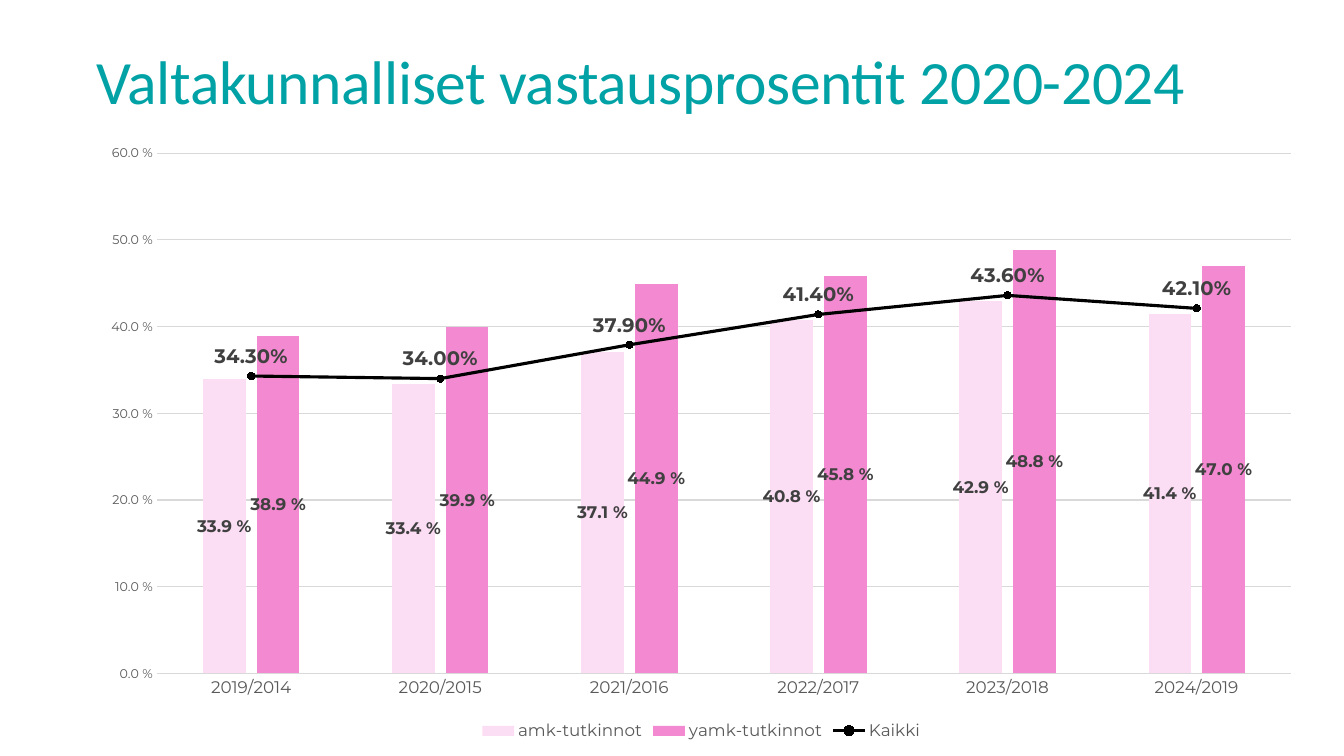
"""Builds a slide with a combined column and line chart of response rates."""
import copy
import pptx
import pptx.chart.data
import pptx.dml.color
import pptx.enum.chart
import pptx.enum.text
import pptx.oxml
import pptx.oxml.ns
import pptx.util

Inches = pptx.util.Inches
Pt = pptx.util.Pt
RGBColor = pptx.dml.color.RGBColor
LabelPosition = pptx.enum.chart.XL_LABEL_POSITION

TEAL = RGBColor(0x00, 0xA2, 0xA6)
PALE_PINK = RGBColor(0xFB, 0xDD, 0xF4)
PINK = RGBColor(0xF3, 0x89, 0xD0)
BLACK = RGBColor(0x00, 0x00, 0x00)
LABEL_GREY = RGBColor(0x40, 0x40, 0x40)
AXIS_GREY = RGBColor(0x59, 0x59, 0x59)
GRID_GREY = RGBColor(0xD9, 0xD9, 0xD9)

PERCENT = "0.0\\ %"
YEARS = ["2019/2014", "2020/2015", "2021/2016", "2022/2017", "2023/2018", "2024/2019"]
RATES = {
    "amk-tutkinnot": [0.339, 0.334, 0.371, 0.408, 0.429, 0.414],
    "yamk-tutkinnot": [0.389, 0.399, 0.449, 0.458, 0.488, 0.47],
    "Kaikki": [0.343, 0.34, 0.379, 0.414, 0.436, 0.421],
}


class RatesSlide:
    title_font = "Calibri"
    chart_font = "Montserrat"

    def __init__(self, deck):
        self.page = deck.slides.add_slide(deck.slide_layouts[5])

    def style_font(self, font, size, color, bold=False):
        font.name = self.chart_font
        font.size = Pt(size)
        font.bold = bold
        font.color.rgb = color

    def add_title(self, text, left, top, width, height):
        title = self.page.shapes.title
        title.left, title.top = Inches(left), Inches(top)
        title.width, title.height = Inches(width), Inches(height)
        frame = title.text_frame
        frame.word_wrap = True
        frame.auto_size = pptx.enum.text.MSO_AUTO_SIZE.NONE
        frame.vertical_anchor = pptx.enum.text.MSO_ANCHOR.MIDDLE
        para = frame.paragraphs[0]
        para.alignment = pptx.enum.text.PP_ALIGN.LEFT
        para.line_spacing = 0.9
        para.space_after = Pt(6)
        span = para.add_run()
        span.text = text
        span.font.name = self.title_font
        span.font.size = Pt(44)
        span.font.color.rgb = TEAL
        span.font._element.set("spc", "-30")

    def add_chart(self, categories, rates, left, top, width, height):
        data = pptx.chart.data.CategoryChartData(number_format=PERCENT)
        data.categories = categories
        for name, values in rates.items():
            data.add_series(name, values)
        chart = self.page.shapes.add_chart(
            pptx.enum.chart.XL_CHART_TYPE.COLUMN_CLUSTERED,
            Inches(left), Inches(top), Inches(width), Inches(height), data).chart
        chart.has_title = False
        self.style_font(chart.font, 10, BLACK)
        chart.has_legend = True
        chart.legend.position = pptx.enum.chart.XL_LEGEND_POSITION.BOTTOM
        chart.legend.include_in_layout = False
        self.style_font(chart.legend.font, 12, AXIS_GREY)
        self.style_axes(chart)
        self.move_last_series_to_line(chart)
        columns, line = chart.plots
        columns.gap_width = 219
        columns.overlap = -27
        columns.vary_by_categories = False
        for series, color in zip(columns.series, (PALE_PINK, PINK)):
            series.format.fill.solid()
            series.format.fill.fore_color.rgb = color
            self.add_labels(series, 12, PERCENT, LabelPosition.CENTER)
        self.style_line(line.series[0])

    def style_axes(self, chart):
        for axis, size in ((chart.category_axis, 12), (chart.value_axis, 9)):
            axis.major_tick_mark = pptx.enum.chart.XL_TICK_MARK.NONE
            axis.minor_tick_mark = pptx.enum.chart.XL_TICK_MARK.NONE
            self.style_font(axis.tick_labels.font, size, AXIS_GREY)
        scale = chart.value_axis
        scale.minimum_scale, scale.maximum_scale, scale.major_unit = 0, 0.6, 0.1
        scale.tick_labels.number_format = PERCENT
        scale.tick_labels.number_format_is_linked = False
        scale.format.line.fill.background()
        scale.has_major_gridlines = True
        for rule in (chart.category_axis.format.line, scale.major_gridlines.format.line):
            rule.color.rgb = GRID_GREY
            rule.width = Pt(0.75)

    def move_last_series_to_line(self, chart):
        qn = pptx.oxml.ns.qn
        columns = chart.plots[0]._element
        line = pptx.oxml.parse_xml(
            f'<c:lineChart {pptx.oxml.ns.nsdecls("c")}><c:grouping val="standard"/>'
            '<c:varyColors val="0"/><c:marker val="1"/></c:lineChart>')
        series = columns.findall(qn("c:ser"))[-1]
        for flag in series.findall(qn("c:invertIfNegative")):
            series.remove(flag)
        line.insert(2, series)
        for axis in columns.findall(qn("c:axId")):
            line.append(copy.deepcopy(axis))
        columns.addnext(line)

    def style_line(self, series):
        series.smooth = False
        series.format.line.color.rgb = BLACK
        series.format.line.width = Pt(2.25)
        marker = series.marker
        marker.style = pptx.enum.chart.XL_MARKER_STYLE.CIRCLE
        marker.size = 5
        marker.format.fill.solid()
        marker.format.fill.fore_color.rgb = BLACK
        marker.format.line.color.rgb = BLACK
        self.add_labels(series, 14, "0.00%", LabelPosition.ABOVE)

    def add_labels(self, series, size, number_format, position):
        labels = series.data_labels
        labels.show_value = True
        labels.number_format = number_format
        labels.number_format_is_linked = False
        labels.position = position
        self.style_font(labels.font, size, LABEL_GREY, bold=True)


def main():
    deck = pptx.Presentation()
    deck.slide_width, deck.slide_height = Inches(13.33), Inches(7.5)
    slide = RatesSlide(deck)
    slide.add_title("Valtakunnalliset vastausprosentit 2020-2024", 0.86, 0.11, 12.19, 1.45)
    slide.add_chart(YEARS, RATES, 0.86, 1.32, 12.19, 6.07)
    deck.save("out.pptx")


if __name__ == "__main__":
    main()
